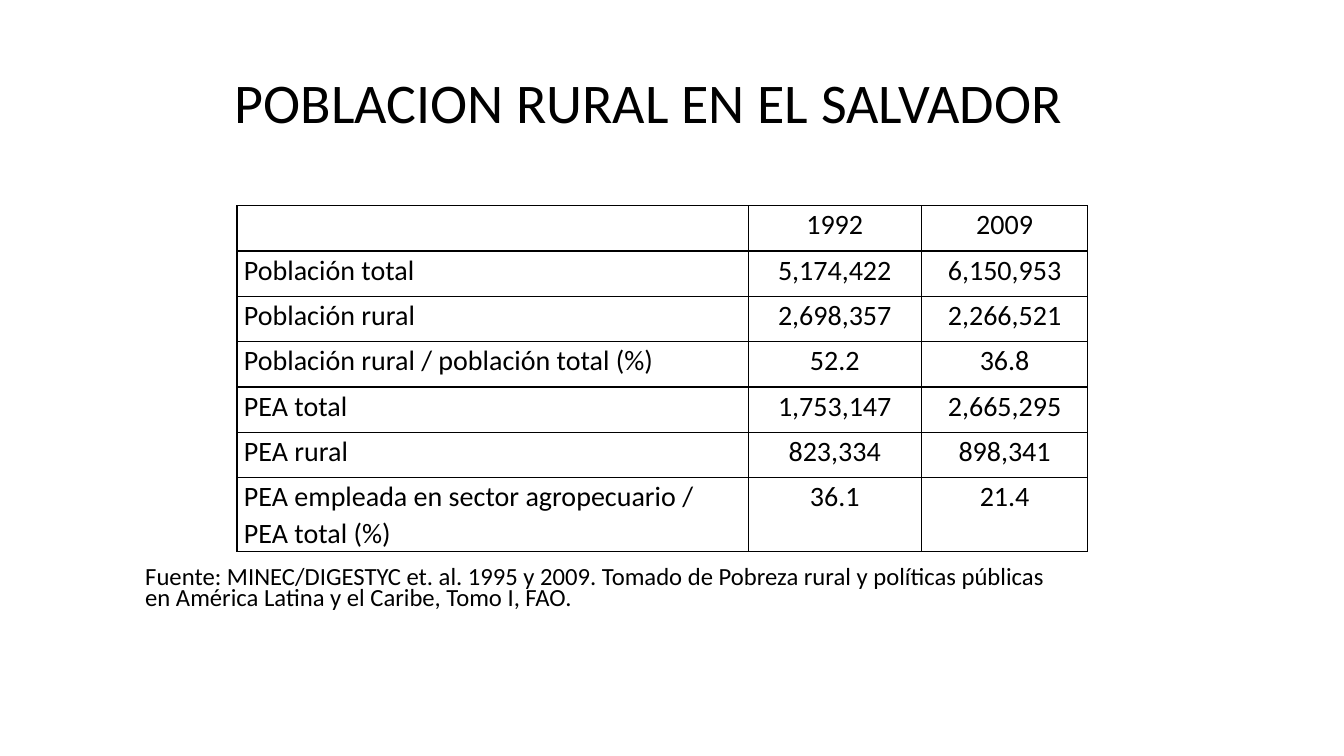
from lxml.etree import SubElement
from pptx import Presentation
from pptx.dml.color import RGBColor
from pptx.enum.text import MSO_ANCHOR, MSO_AUTO_SIZE, PP_ALIGN
from pptx.oxml.ns import qn
from pptx.util import Inches, Pt

COLORS = {"ink": "000000", "paper": "FFFFFF"}
FONT = "Calibri"
TITLE = "POBLACION RURAL EN EL SALVADOR"
SOURCE = (
    "Fuente: MINEC/DIGESTYC et. al. 1995 y 2009. Tomado de Pobreza rural y "
    "políticas públicas en América Latina y el Caribe, Tomo I, FAO."
)
POPULATION = [
    ("", "1992", "2009"),
    ("Población total", "5,174,422", "6,150,953"),
    ("Población rural", "2,698,357", "2,266,521"),
    ("Población rural / población total (%)", "52.2", "36.8"),
    ("PEA total", "1,753,147", "2,665,295"),
    ("PEA rural", "823,334", "898,341"),
    ("PEA empleada en sector agropecuario / PEA total (%)", "36.1", "21.4"),
]
COLUMN_WIDTHS = (5.07, 1.72, 1.65)
ROW_HEIGHT = 0.45


def write(frame, text, size, align, spacing):
    """Fill the first paragraph of a text frame with one formatted run."""
    paragraph = frame.paragraphs[0]
    paragraph.alignment = align
    paragraph.line_spacing = spacing
    run = paragraph.add_run()
    run.text = text
    run.font.size = Pt(size)
    run.font.name = FONT
    run.font.color.rgb = RGBColor.from_string(COLORS["ink"])
    return paragraph


def place(placeholder, box):
    """Move a placeholder to its box and return its middle-anchored frame."""
    placeholder.left, placeholder.top, placeholder.width, placeholder.height = map(Inches, box)
    frame = placeholder.text_frame
    frame.word_wrap = True
    frame.auto_size = MSO_AUTO_SIZE.NONE
    frame.vertical_anchor = MSO_ANCHOR.MIDDLE
    return frame


def add_title(slide, box):
    """Write the slide title in its box."""
    write(place(slide.shapes.title, box), TITLE, 40, PP_ALIGN.CENTER, 0.9)


def add_source(slide, box):
    """Write the source note, without bullet, in its box."""
    note = write(place(slide.placeholders[1], box), SOURCE, 17.6, PP_ALIGN.LEFT, 0.7)
    note.space_before = Pt(10)
    properties = note._p.get_or_add_pPr()
    properties.set("marL", "0")
    properties.set("indent", "0")
    SubElement(properties, qn("a:buNone"))


def outline(cell):
    """Draw a thin line on the four sides of a cell."""
    properties = cell._tc.get_or_add_tcPr()
    for side in ("a:lnL", "a:lnR", "a:lnT", "a:lnB"):
        line = SubElement(properties, qn(side), w=str(Pt(1)))
        fill = SubElement(line, qn("a:solidFill"))
        SubElement(fill, qn("a:srgbClr"), val=COLORS["ink"])


def add_population_table(slide, left, top):
    """Build the population table from its top left corner."""
    rows, columns = len(POPULATION), len(COLUMN_WIDTHS)
    table = slide.shapes.add_table(
        rows, columns, Inches(left), Inches(top),
        Inches(sum(COLUMN_WIDTHS)), Inches(rows * ROW_HEIGHT),
    ).table
    table.first_row = table.horz_banding = False
    for column, width in zip(table.columns, COLUMN_WIDTHS):
        column.width = Inches(width)
    for row, entries in zip(table.rows, POPULATION):
        row.height = Inches(ROW_HEIGHT)
        for index, (cell, entry) in enumerate(zip(row.cells, entries)):
            cell.margin_left = cell.margin_right = Inches(0.07)
            cell.margin_top = cell.margin_bottom = 0
            outline(cell)
            cell.fill.solid()
            cell.fill.fore_color.rgb = RGBColor.from_string(COLORS["paper"])
            if entry:
                align = PP_ALIGN.CENTER if index else PP_ALIGN.LEFT
                write(cell.text_frame, entry, 20, align, 1.07)


def main():
    """Build and save the slide."""
    deck = Presentation()
    deck.slide_width, deck.slide_height = Inches(13.33), Inches(7.5)
    slide = deck.slides.add_slide(deck.slide_layouts[1])
    add_title(slide, (0.93, 0.27, 11, 1.55))
    add_source(slide, (1.34, 5.58, 9.31, 0.54))
    add_population_table(slide, 2.35, 2.04)
    deck.save("out.pptx")


if __name__ == "__main__":
    main()
